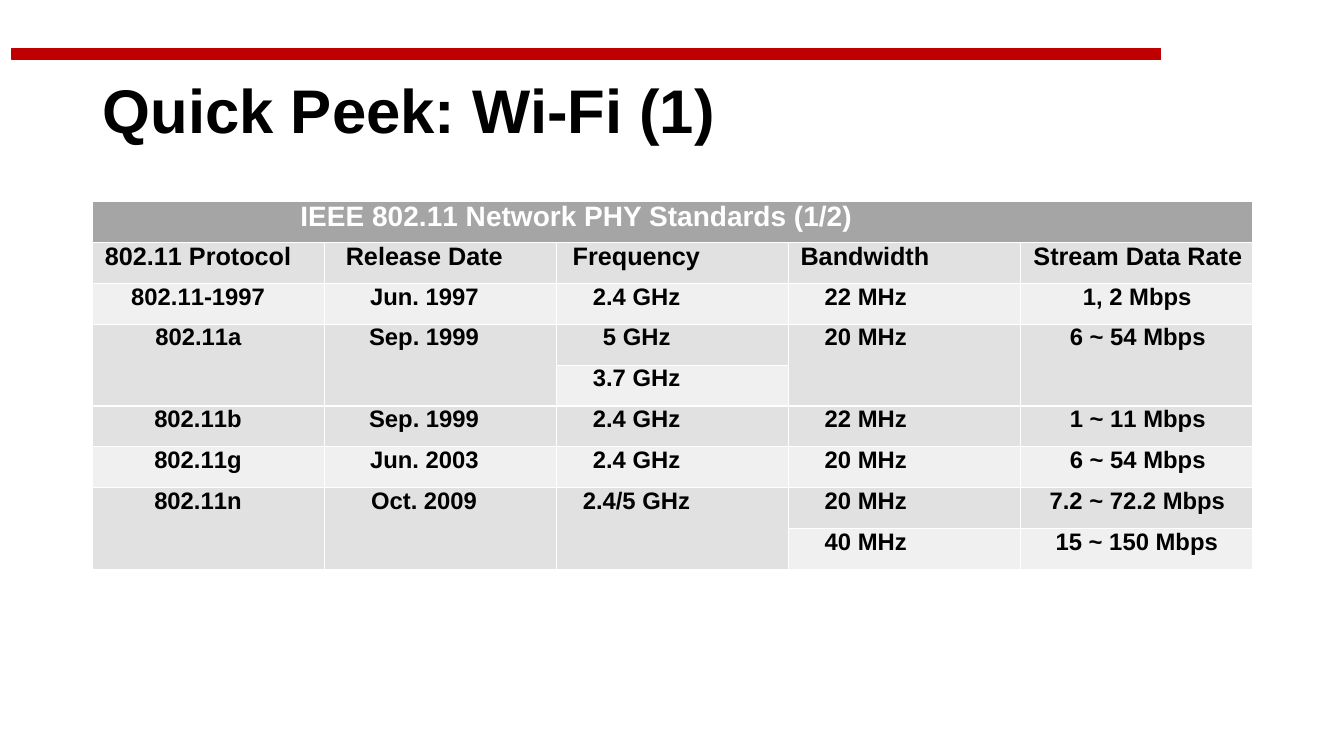
from pptx import Presentation
from pptx.dml.color import RGBColor
from pptx.enum.shapes import MSO_SHAPE
from pptx.enum.text import MSO_ANCHOR, PP_ALIGN
from pptx.util import Inches, Pt

TITLE = "Quick Peek: Wi-Fi (1)"
FONT = "Arial"
COLORS = {"red": "C00000", "black": "000000", "white": "FFFFFF",
          "head": "A5A5A5", "dark": "E1E1E1", "light": "F0F0F0"}

# Each cell is its text and left indent in inches; None continues the cell above.
HEAD = ("IEEE 802.11 Network PHY Standards (1/2)", 2.06)
NAMES = [("802.11 Protocol", 0.12), ("Release Date", 0.21), ("Frequency", 0.16),
         ("Bandwidth", 0.12), ("Stream Data Rate", 0.13)]
ROWS = [
    [("802.11-1997", 0.38), ("Jun. 1997", 0.45), ("2.4 GHz", 0.36),
     ("22 MHz", 0.36), ("1, 2 Mbps", 0.62)],
    [("802.11a", 0.62), ("Sep. 1999", 0.44), ("5 GHz", 0.46),
     ("20 MHz", 0.36), ("6 ~ 54 Mbps", 0.49)],
    [None, None, ("3.7 GHz", 0.36), None, None],
    [("802.11b", 0.61), ("Sep. 1999", 0.44), ("2.4 GHz", 0.36),
     ("22 MHz", 0.36), ("1 ~ 11 Mbps", 0.49)],
    [("802.11g", 0.61), ("Jun. 2003", 0.45), ("2.4 GHz", 0.36),
     ("20 MHz", 0.36), ("6 ~ 54 Mbps", 0.49)],
    [("802.11n", 0.61), ("Oct. 2009", 0.46), ("2.4/5 GHz", 0.26),
     ("20 MHz", 0.36), ("7.2 ~ 72.2 Mbps", 0.29)],
    [None, None, None, ("40 MHz", 0.36), ("15 ~ 150 Mbps", 0.35)],
]


def color(name):
    return RGBColor.from_string(COLORS[name])


def add_run(para, text, size, ink):
    run = para.add_run()
    run.text = text
    font = run.font
    font.name, font.size, font.bold = FONT, Pt(size), True
    font.color.rgb = color(ink)
    return run


def write(cell, text, indent, size, ink="black"):
    """Fill a cell with text, pulling the two digits of "11" together."""
    para = cell.text_frame.paragraphs[0]
    para._p.get_or_add_pPr().set("marL", str(Inches(indent)))
    start, pair, rest = text.partition("11")
    add_run(para, start, size, ink)
    if pair:
        tight = add_run(para, "1", size, ink)
        tight.font._element.set("spc", "-100")
        add_run(para, "1" + rest, size, ink)


def add_title(slide):
    title = slide.shapes.title
    title.left, title.top = Inches(0.92), Inches(0.4)
    title.width, title.height = Inches(11.5), Inches(1.45)
    frame = title.text_frame
    frame.word_wrap = True
    frame.vertical_anchor = MSO_ANCHOR.MIDDLE
    para = frame.paragraphs[0]
    para.alignment = PP_ALIGN.LEFT
    para.line_spacing = 0.9
    add_run(para, TITLE, 44, "black")


def add_bar(slide):
    bar = slide.shapes.add_shape(MSO_SHAPE.RECTANGLE, Inches(0.12), Inches(0.48),
                                 Inches(11.39), Inches(0.11))
    bar.shadow.inherit = False
    bar.fill.solid()
    bar.fill.fore_color.rgb = color("red")
    bar.line.color.rgb = color("red")
    bar.line.width = Pt(1)
    slide.shapes.title._element.addprevious(bar._element)


def add_grid(slide):
    body = [NAMES] + ROWS
    count, cols = len(body) + 1, len(NAMES)
    table = slide.shapes.add_table(count, cols, Inches(0.92), Inches(2),
                                   Inches(11.5), Inches(3.65)).table
    for r in range(count):
        shade = "head" if r == 0 else "dark" if r % 2 else "light"
        for c in range(cols):
            cell = table.cell(r, c)
            cell.margin_left = cell.margin_right = 0
            cell.margin_top = cell.margin_bottom = 0
            cell.fill.solid()
            cell.fill.fore_color.rgb = color(shade)

    table.cell(0, 0).merge(table.cell(0, cols - 1))
    write(table.cell(0, 0), *HEAD, 20, "white")
    for r, row in enumerate(body, 1):
        for c, item in enumerate(row):
            if item is None:
                table.cell(r - 1, c).merge(table.cell(r, c))
            else:
                write(table.cell(r, c), *item, 18 if r == 1 else 17)


def main():
    deck = Presentation()
    deck.slide_width, deck.slide_height = Inches(13.33), Inches(7.5)
    slide = deck.slides.add_slide(deck.slide_layouts[5])
    add_title(slide)
    add_bar(slide)
    add_grid(slide)
    deck.save("out.pptx")


if __name__ == "__main__":
    main()
